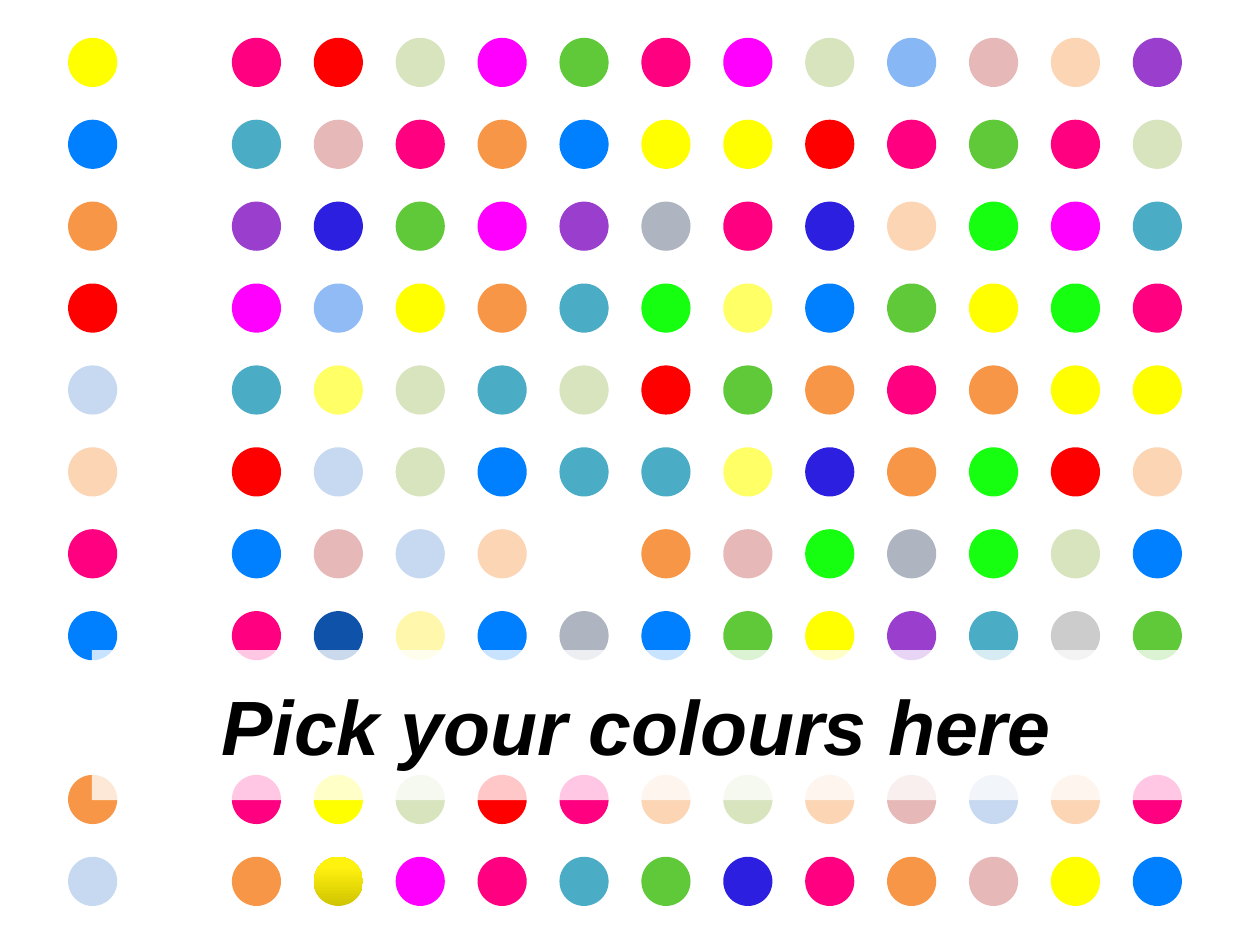
import pptx
import pptx.dml.color
import pptx.enum.shapes
import pptx.enum.text
import pptx.oxml.ns
import pptx.util
from lxml import etree

THEME = {
    "font": "Arial",
    "title_size": 44,
    "title_text": "000000",
    "band": "FFFFFF",
    "band_alpha": 78,
    "gold_gradient": [(0, "D0C400"), (0.8, "FFF20F")],
    "dots": {
        "Y": "FFFF00",  # yellow
        "N": "FFFF66",  # lemon
        "E": "FFF7AB",  # cream
        "O": "F79646",  # orange
        "F": "FCD5B5",  # peach
        "K": "E6B9B8",  # rose
        "R": "FF0000",  # red
        "P": "FF0080",  # pink
        "M": "FF00FF",  # magenta
        "V": "993ECD",  # violet
        "I": "2C1FDF",  # indigo
        "D": "0F52A9",  # dark blue
        "B": "0080FF",  # blue
        "H": "87B7F4",  # sky
        "J": "90BBF4",  # light sky
        "C": "C6D9F1",  # pale blue
        "T": "4BACC6",  # teal
        "G": "60C939",  # green
        "L": "16FF11",  # lime
        "S": "D7E4BD",  # sage
        "A": "AEB5C0",  # blue grey
        "Z": "CCCCCC",  # grey
        "W": "FFFFFF",  # white
    },
}

# One letter per dot; "." leaves a cell empty and "U" is the gold gradient.
PALETTE = [
    "Y.PRSMGPMSHKFV",
    "B.TKPOBYYRPGPS",
    "O.VIGMVAPIFLMT",
    "R.MJYOTLNBGYLP",
    "C.TNSTSRGOPOYY",
    "F.RCSBTTNIOLRF",
    "P.BKCFWOKLALSB",
    "B.PDEBABGYVTZG",
    "..............",
    "O.PYSRPFSFKCFP",
    "C.OUMPTGIPOKYB",
]
LEFT, TOP, PITCH, DOT = 0.54, 0.3, 0.65, 0.39

inch = pptx.util.Inches
rgb = pptx.dml.color.RGBColor.from_string

prs = pptx.Presentation()
prs.slide_width, prs.slide_height = inch(10), inch(7.5)
s = prs.slides.add_slide(prs.slide_layouts.get_by_name("Title Only"))

# Grid of dots
for row, letters in enumerate(PALETTE):
    for col, letter in enumerate(letters):
        if letter == ".":
            continue
        dot = s.shapes.add_shape(
            pptx.enum.shapes.MSO_SHAPE.OVAL,
            inch(LEFT + col * PITCH), inch(TOP + row * PITCH),
            inch(DOT), inch(DOT))
        dot.shadow.inherit = False
        dot.line.fill.background()
        if letter == "U":
            dot.fill.gradient()
            dot.fill.gradient_angle = 90
            for stop, (position, color) in zip(dot.fill.gradient_stops,
                                               THEME["gold_gradient"]):
                stop.position = position
                stop.color.rgb = rgb(color)
        else:
            dot.fill.solid()
            dot.fill.fore_color.rgb = rgb(THEME["dots"][letter])

# Title on a translucent band, brought in front of the dots
title = s.shapes.title
s.shapes._spTree.append(title._element)
title.left, title.top = inch(0.73), inch(5.16)
title.width, title.height = inch(8.65), inch(1.19)
title.fill.solid()
title.fill.fore_color.rgb = rgb(THEME["band"])
qn = pptx.oxml.ns.qn
band_color = title._element.spPr.find(qn("a:solidFill")).find(qn("a:srgbClr"))
etree.SubElement(band_color, qn("a:alpha"), val=str(THEME["band_alpha"] * 1000))

tf = title.text_frame
tf.text = "Pick your colours here"
tf.word_wrap = True
tf.auto_size = pptx.enum.text.MSO_AUTO_SIZE.NONE
tf.vertical_anchor = pptx.enum.text.MSO_ANCHOR.MIDDLE
p = tf.paragraphs[0]
p.alignment = pptx.enum.text.PP_ALIGN.CENTER
r = p.runs[0]
r.font.name = THEME["font"]
r.font.size = pptx.util.Pt(THEME["title_size"])
r.font.bold = r.font.italic = True
r.font.color.rgb = rgb(THEME["title_text"])

prs.save("out.pptx")
